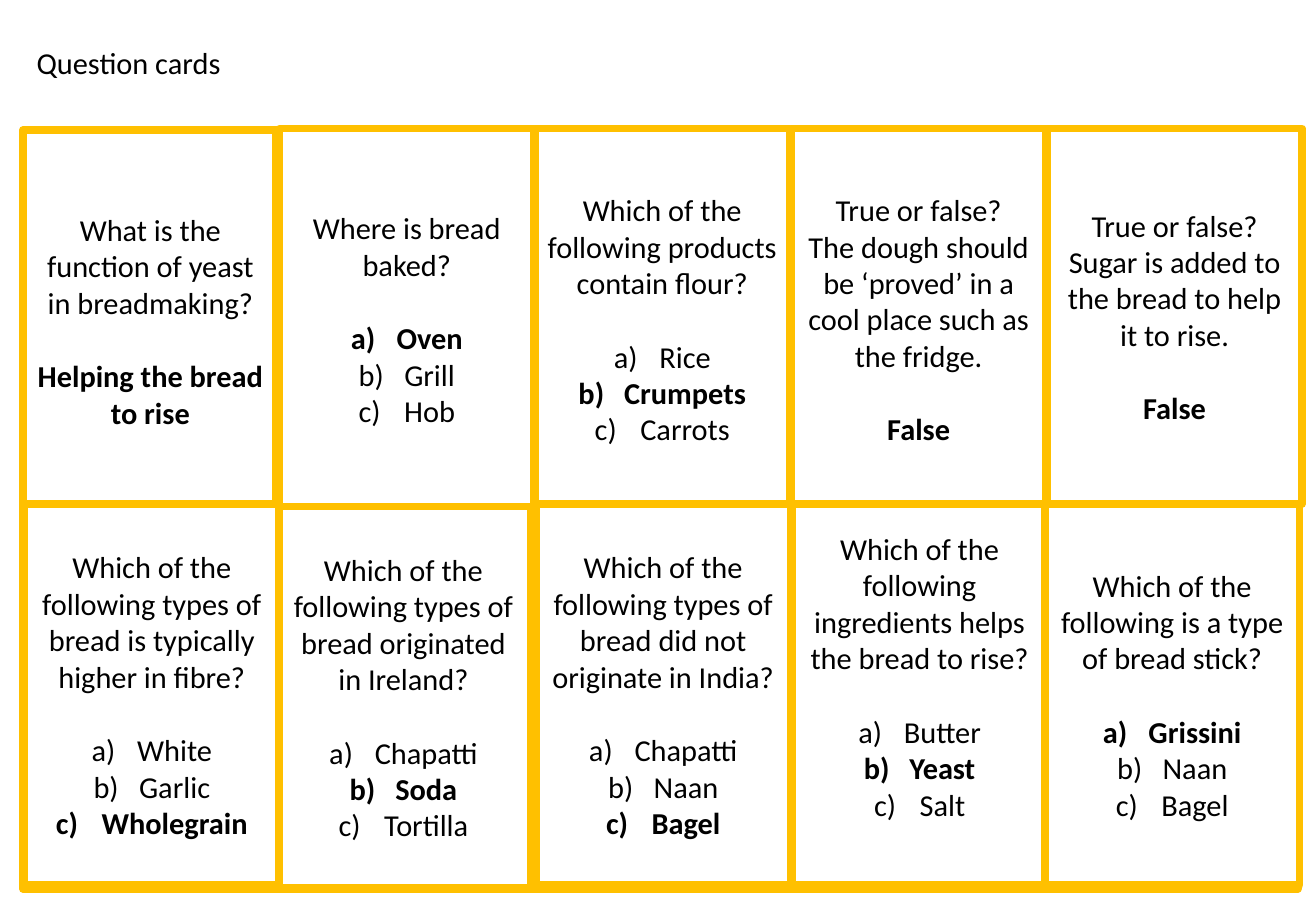
"""Build a slide of bread quiz question cards."""
from lxml import etree
from pptx import Presentation
from pptx import util as u
from pptx.dml.color import RGBColor
from pptx.enum import shapes, text
from pptx.oxml.ns import qn

HUES = {"gold": "FFC000", "white": "FFFFFF", "ink": "000000"}
WIDE, HIGH = 5.33, 7.97
LEFT, TOP, LOW = 0.48, 2.72, 10.62
YEAST = (["What is the function of yeast in breadmaking?"],
         ["Helping the bread to rise"], 0)
CARDS = [
    (5.84, 2.69, HIGH, ["Where is bread baked?"], ["Oven", "Grill", "Hob"], 0),
    (11.18, 2.69, HIGH, ["Which of the following products contain flour?"],
     ["Rice", "Crumpets", "Carrots"], 1),
    (16.54, 2.69, HIGH,
     ["True or false?",
      "The dough should be ‘proved’ in a cool place such as the fridge."],
     ["False"], 0),
    (5.77, 10.59, HIGH,
     ["Which of the following types of bread originated in Ireland?"],
     ["Chapatti", "Soda", "Tortilla"], 1),
    (0.51, 10.54, HIGH,
     ["Which of the following types of bread is typically higher in fibre?"],
     ["White", "Garlic", "Wholegrain"], 2),
    (11.2, 10.54, HIGH,
     ["Which of the following types of bread did not originate in India?"],
     ["Chapatti", "Naan", "Bagel"], 2),
    (16.56, 10.54, HIGH,
     ["Which of the following ingredients helps the bread to rise?"],
     ["Butter", "Yeast", "Salt"], 1),
    (21.84, 10.54, HIGH, ["Which of the following is a type of bread stick?"],
     ["Grissini", "Naan", "Bagel"], 0),
    (21.89, 2.69, 7.85,
     ["True or false?", "Sugar is added to the bread to help it to rise."],
     ["False"], 0),
]


class Deck:
    def __init__(self, wide, high):
        self.prs = Presentation()
        self.prs.slide_width, self.prs.slide_height = u.Cm(wide), u.Cm(high)
        self.slide = self.prs.slides.add_slide(self.prs.slide_layouts[5])
        self.font, self.size = "Calibri", 18

    def hue(self, name):
        return RGBColor.from_string(HUES[name])

    def style(self, para, bold=False):
        for run in para.runs:
            font = run.font
            font.name, font.size, font.bold = self.font, u.Pt(self.size), bold
            font.color.rgb = self.hue("ink")

    def title(self, x, y, w, h, words):
        box = self.slide.shapes.title
        box.left, box.top, box.width, box.height = map(u.Cm, (x, y, w, h))
        frame = box.text_frame
        frame.text = words
        frame.word_wrap = False
        frame.auto_size = text.MSO_AUTO_SIZE.SHAPE_TO_FIT_TEXT
        frame.vertical_anchor = text.MSO_ANCHOR.TOP
        frame.paragraphs[0].alignment = text.PP_ALIGN.LEFT
        self.style(frame.paragraphs[0])

    def card(self, x, y, h=HIGH):
        box = self.slide.shapes.add_shape(
            shapes.MSO_SHAPE.RECTANGLE, *map(u.Cm, (x, y, WIDE, h)))
        box.shadow.inherit = False
        box.fill.solid()
        box.fill.fore_color.rgb = self.hue("white")
        box.line.color.rgb = self.hue("gold")
        box.line.width = u.Pt(4.5)
        return box

    def quiz(self, box, asks, picks, right):
        frame = box.text_frame
        frame.text = "\n".join(asks + picks)
        frame.word_wrap = True
        frame.vertical_anchor = text.MSO_ANCHOR.MIDDLE
        for i, para in enumerate(frame.paragraphs, -len(asks)):
            para.alignment = text.PP_ALIGN.CENTER
            self.style(para, i == right)
            if i == 0:
                para.space_before = u.Pt(22)
            if i >= 0 and len(picks) > 1:
                self.letter(para)

    def letter(self, para):
        props = para._p.get_or_add_pPr()
        props.set("marL", "342900")
        props.set("indent", "-342900")
        etree.SubElement(props, qn("a:buFont"), typeface="+mj-lt")
        etree.SubElement(props, qn("a:buAutoNum"), type="alphaLcParenR")

    def rule(self, *ends):
        line = self.slide.shapes.add_connector(
            shapes.MSO_CONNECTOR.STRAIGHT, *map(u.Cm, ends))
        line.line.color.rgb = self.hue("gold")
        line.line.width = u.Pt(9)
        etree.SubElement(line._element.spPr, qn("a:effectLst"))


def main():
    deck = Deck(27.51, 19.05)
    deck.title(0.51, 0.79, 4.39, 1.02, "Question cards")
    grid = [deck.card(LEFT + WIDE * col, y)
            for col in range(5) for y in (TOP, LOW)]
    deck.quiz(grid[0], *YEAST)
    for x, y in ((5.84, 2.74), (21.84, TOP), (16.48, TOP), (11.15, 2.77)):
        deck.rule(x, y, x, y + 15.88)
    deck.rule(27.18, LOW, LEFT, LOW)
    for x, y, h, asks, picks, right in CARDS:
        box = deck.card(x, y, h)
        deck.quiz(box, asks, picks, right)
        if "Yeast" in picks:
            box.text_frame.margin_bottom = u.Cm(0.9)
    deck.prs.save("out.pptx")


if __name__ == "__main__":
    main()
